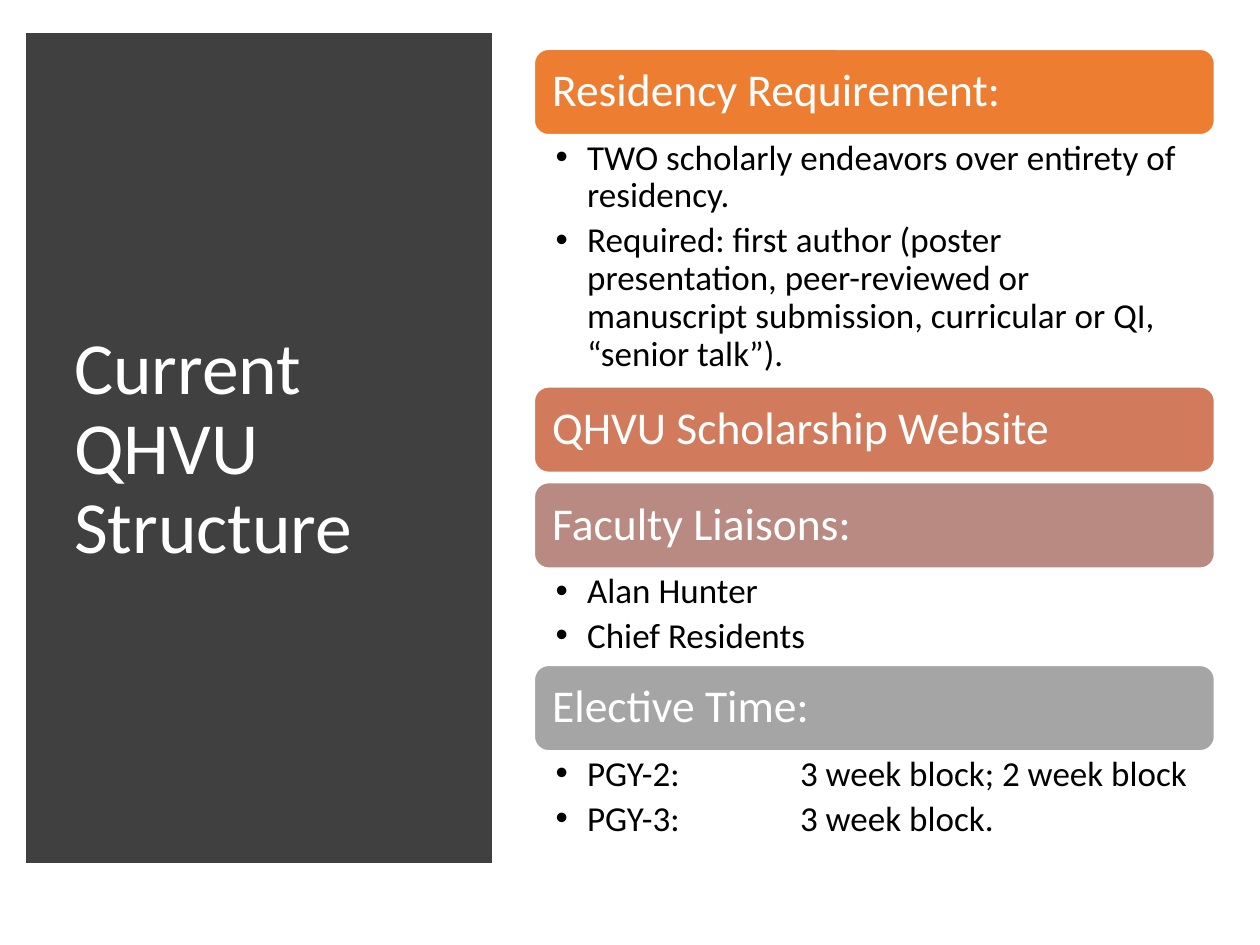
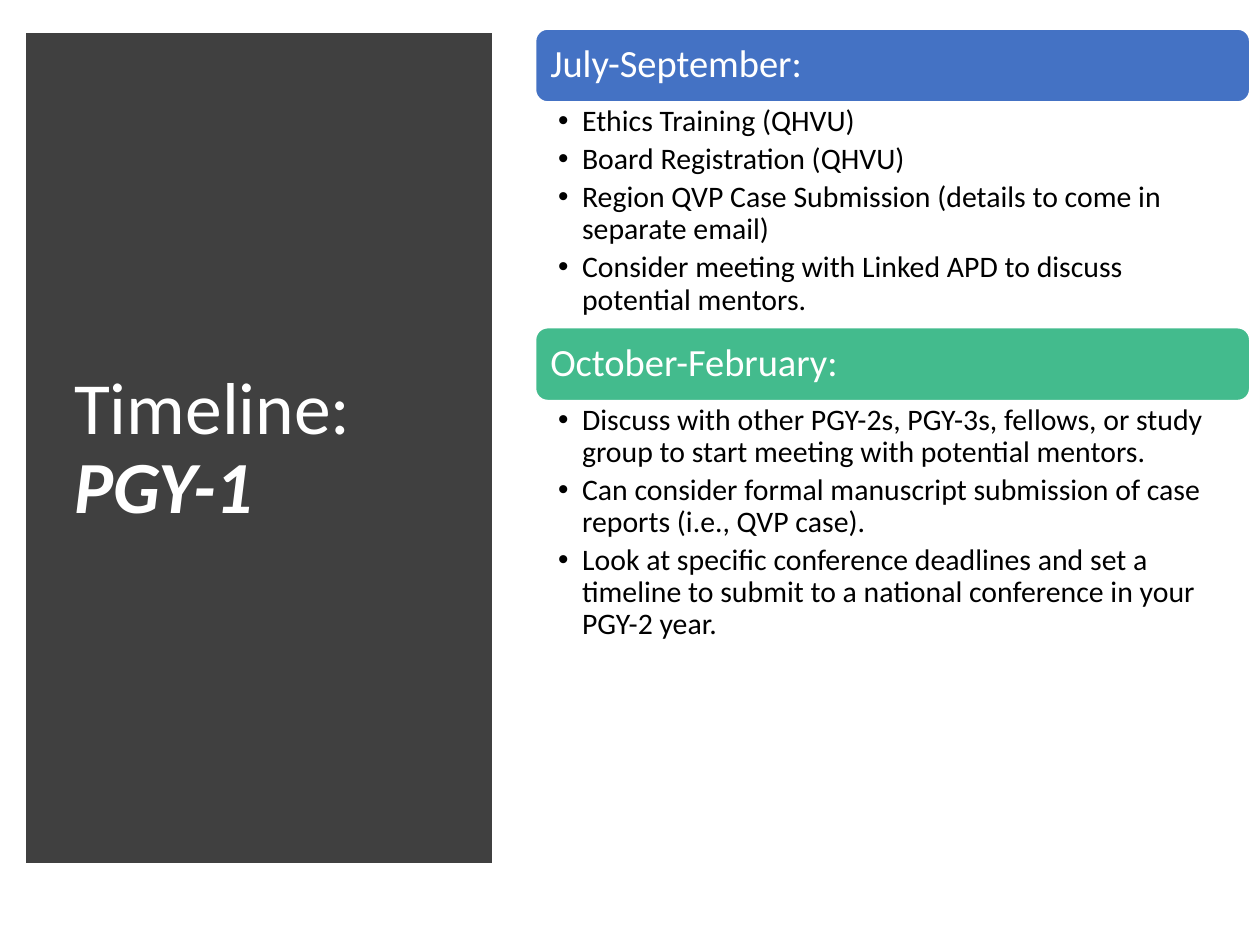
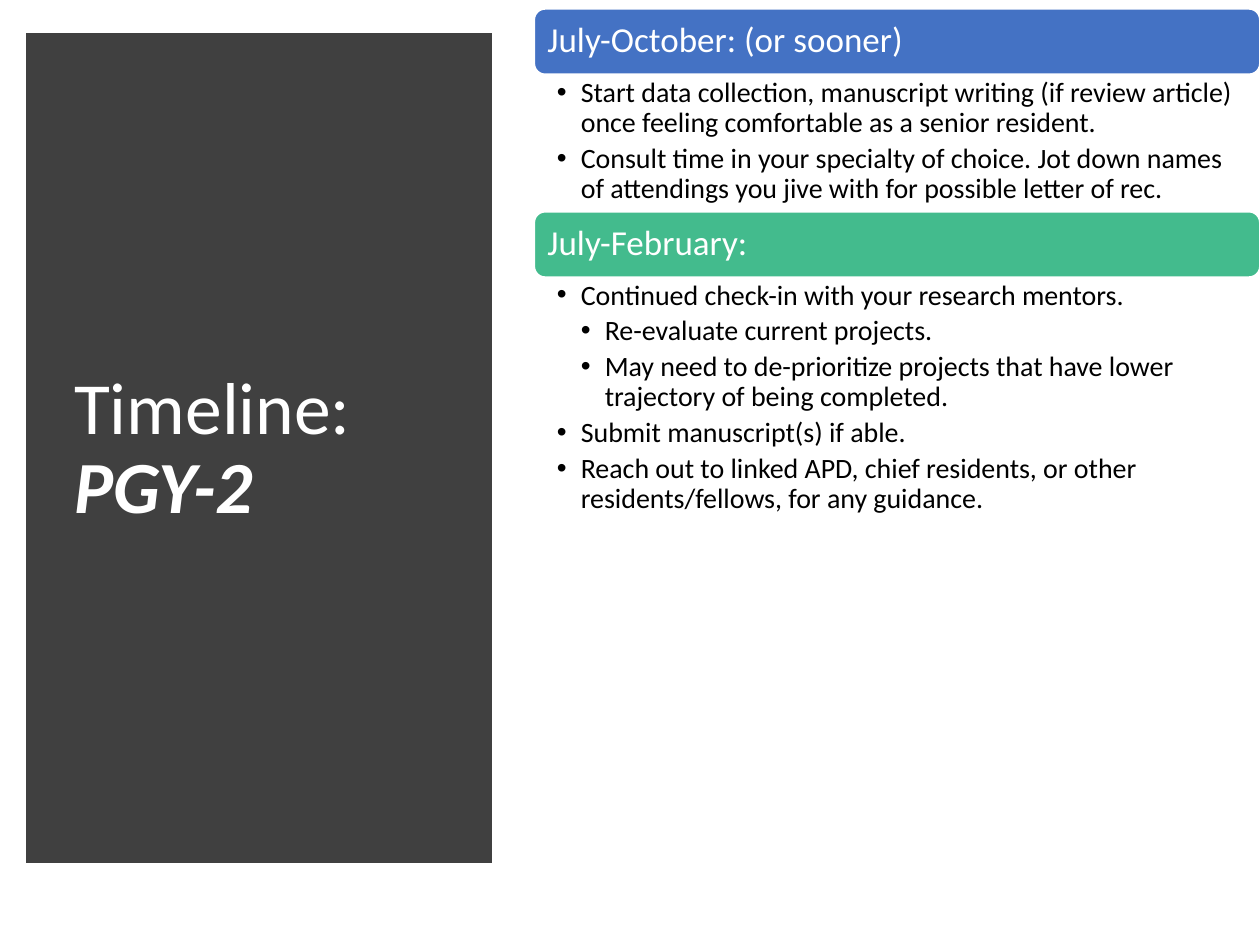
import dataclasses

import pptx
import pptx.dml.color
import pptx.enum.shapes
import pptx.enum.text
import pptx.oxml.ns
import pptx.util
from lxml import etree

RGBColor = pptx.dml.color.RGBColor
WHITE = RGBColor(0xFF, 0xFF, 0xFF)
BLACK = RGBColor(0x00, 0x00, 0x00)
CHARCOAL = RGBColor(0x40, 0x40, 0x40)
ORANGE = RGBColor(0xED, 0x7D, 0x31)
TERRACOTTA = RGBColor(0xD1, 0x7B, 0x5C)
ROSE = RGBColor(0xB9, 0x8A, 0x82)
GRAY = RGBColor(0xA5, 0xA5, 0xA5)
BLUE = RGBColor(0x44, 0x72, 0xC4)
GREEN = RGBColor(0x43, 0xBB, 0x8D)

FONT = "Calibri"
COLUMNS, ROWS = 100, 75
SECTION_GAP = 0.8
SHAPES = pptx.enum.shapes.MSO_SHAPE
MIDDLE = pptx.enum.text.MSO_ANCHOR.MIDDLE
TOP = pptx.enum.text.MSO_ANCHOR.TOP


@dataclasses.dataclass
class Stack:
    left: float
    top: float
    width: float
    header_height: float
    header_size: int
    header_inset: float
    bullet_size: int
    bullet_indent: float
    bullet_insets: tuple


@dataclasses.dataclass
class Section:
    heading: str
    color: RGBColor
    height: float = 0
    bullets: tuple = ()


def write_text(para, text, size, color, bold=False, italic=False):
    span = para.add_run()
    span.text = text
    span.font.name = FONT
    span.font.size = pptx.util.Pt(size)
    span.font.color.rgb = color
    span.font.bold = bold
    span.font.italic = italic
    para.line_spacing = 0.9
    para.alignment = pptx.enum.text.PP_ALIGN.LEFT


class SlideBuilder:
    def __init__(self):
        self.deck = pptx.Presentation()
        self.deck.slide_width = pptx.util.Inches(10)
        self.deck.slide_height = pptx.util.Inches(7.5)
        self.page = None

    def add_page(self):
        self.page = self.deck.slides.add_slide(self.deck.slide_layouts[6])

    def area(self, left, top, width, height):
        column = self.deck.slide_width / COLUMNS
        row = self.deck.slide_height / ROWS
        return round(left * column), round(top * row), round(width * column), round(height * row)

    def add_block(self, kind, area, fill, line, line_width):
        block = self.page.shapes.add_shape(kind, *self.area(*area))
        block.shadow.inherit = False
        block.fill.solid()
        block.fill.fore_color.rgb = fill
        block.line.color.rgb = line
        block.line.width = pptx.util.Pt(line_width)
        return block

    def add_text_box(self, area):
        return self.page.shapes.add_textbox(*self.area(*area))

    def set_frame(self, shape, anchor, insets):
        frame = shape.text_frame
        frame.word_wrap = True
        frame.vertical_anchor = anchor
        sides = ("margin_left", "margin_top", "margin_right", "margin_bottom")
        for side, inset in zip(sides, insets):
            setattr(frame, side, pptx.util.Inches(inset))
        return frame

    def add_title_panel(self, title, emphasis=""):
        panel = self.add_block(SHAPES.RECTANGLE, (2.8, 3.3, 35.6, 64.5), CHARCOAL, CHARCOAL, 10)
        outline = panel.line.fill._xPr
        etree.SubElement(outline, pptx.oxml.ns.qn("a:miter"), lim="800000")
        box = self.add_text_box((4.9, 7, 31.2, 57.5))
        para = self.set_frame(box, MIDDLE, (0.1, 0.05, 0.1, 0.05)).paragraphs[0]
        write_text(para, title, size=42, color=WHITE)
        if emphasis:
            write_text(para, emphasis, size=42, color=WHITE, bold=True, italic=True)

    def add_header(self, section, stack, top):
        area = (stack.left, top, stack.width, stack.header_height)
        header = self.add_block(SHAPES.ROUNDED_RECTANGLE, area, section.color, WHITE, 1)
        frame = self.set_frame(header, MIDDLE, (stack.header_inset,) * 4)
        write_text(frame.paragraphs[0], section.heading, size=stack.header_size, color=WHITE)

    def add_bullets(self, section, stack, top):
        box = self.add_text_box((stack.left, top, stack.width, section.height))
        frame = self.set_frame(box, TOP, stack.bullet_insets)
        for index, bullet in enumerate(section.bullets):
            level, text = bullet if isinstance(bullet, tuple) else (1, bullet)
            para = frame.add_paragraph() if index else frame.paragraphs[0]
            write_text(para, text, size=stack.bullet_size, color=BLACK)
            para.level = level
            para.space_after = pptx.util.Pt(0.2 * stack.bullet_size)
            indent = pptx.util.Inches(stack.bullet_indent)
            settings = para._p.get_or_add_pPr()
            settings.set("marL", str(indent * level))
            settings.set("indent", str(-indent))
            settings.set("defTabSz", str(pptx.util.Inches(0.97)))
            etree.SubElement(settings, pptx.oxml.ns.qn("a:buFont"), typeface="Arial")
            etree.SubElement(settings, pptx.oxml.ns.qn("a:buChar"), char="•")

    def add_sections(self, stack, sections):
        top = stack.top
        for section in sections:
            self.add_header(section, stack, top)
            top += stack.header_height
            if section.bullets:
                self.add_bullets(section, stack, top)
            top += section.height or SECTION_GAP


STRUCTURE_STACK = Stack(42.4, 3.9, 54, 6.8, 26, 0.11, 20, 0.25, (0.17, 0.04, 0.2, 0.04))
FIRST_YEAR_STACK = Stack(42.5, 2.3, 56.7, 5.8, 22, 0.09, 17, 0.19, (0.18, 0.03, 0.17, 0.03))
SECOND_YEAR_STACK = Stack(42.4, 0.7, 57.6, 5.2, 20, 0.08, 16, 0.19, (0.18, 0.03, 0.16, 0.03))

PAGES = (
    (("Current QHVU Structure",), STRUCTURE_STACK, (
        Section("Residency Requirement:", ORANGE, 20, (
            "TWO scholarly endeavors over entirety of residency.",
            "Required: first author (poster presentation, peer-reviewed or manuscript "
            "submission, curricular or QI, “senior talk”).",
        )),
        Section("QHVU Scholarship Website", TERRACOTTA),
        Section("Faculty Liaisons:", ROSE, 7.7, ("Alan Hunter", "Chief Residents")),
        Section("Elective Time:", GRAY, 7.7, (
            "PGY-2: \t3 week block; 2 week block",
            "PGY-3: \t3 week block.",
        )),
    )),
    (("Timeline: ", "PGY-1"), FIRST_YEAR_STACK, (
        Section("July-September:", BLUE, 17.9, (
            "Ethics Training (QHVU)",
            "Board Registration (QHVU)",
            "Region QVP Case Submission (details to come in separate email)",
            "Consider meeting with Linked APD to discuss potential mentors.",
        )),
        Section("October-February:", GREEN, 19.9, (
            "Discuss with other PGY-2s, PGY-3s, fellows, or study group to start meeting "
            "with potential mentors.",
            "Can consider formal manuscript submission of case reports (i.e., QVP case).",
            "Look at specific conference deadlines and set a timeline to submit to a "
            "national conference in your PGY-2 year.",
        )),
    )),
    (("Timeline: ", "PGY-2"), SECOND_YEAR_STACK, (
        Section("July-October: (or sooner)", BLUE, 10.9, (
            "Start data collection, manuscript writing (if review article) once feeling "
            "comfortable as a senior resident.",
            "Consult time in your specialty of choice. Jot down names of attendings you "
            "jive with for possible letter of rec.",
        )),
        Section("July-February:", GREEN, 19.9, (
            "Continued check-in with your research mentors.",
            (2, "Re-evaluate current projects."),
            (2, "May need to de-prioritize projects that have lower trajectory of being "
                "completed."),
            "Submit manuscript(s) if able.",
            "Reach out to linked APD, chief residents, or other residents/fellows, for "
            "any guidance.",
        )),
    )),
)


def main():
    builder = SlideBuilder()
    for titles, stack, sections in PAGES:
        builder.add_page()
        builder.add_title_panel(*titles)
        builder.add_sections(stack, sections)
    builder.deck.save("out.pptx")


if __name__ == "__main__":
    main()
